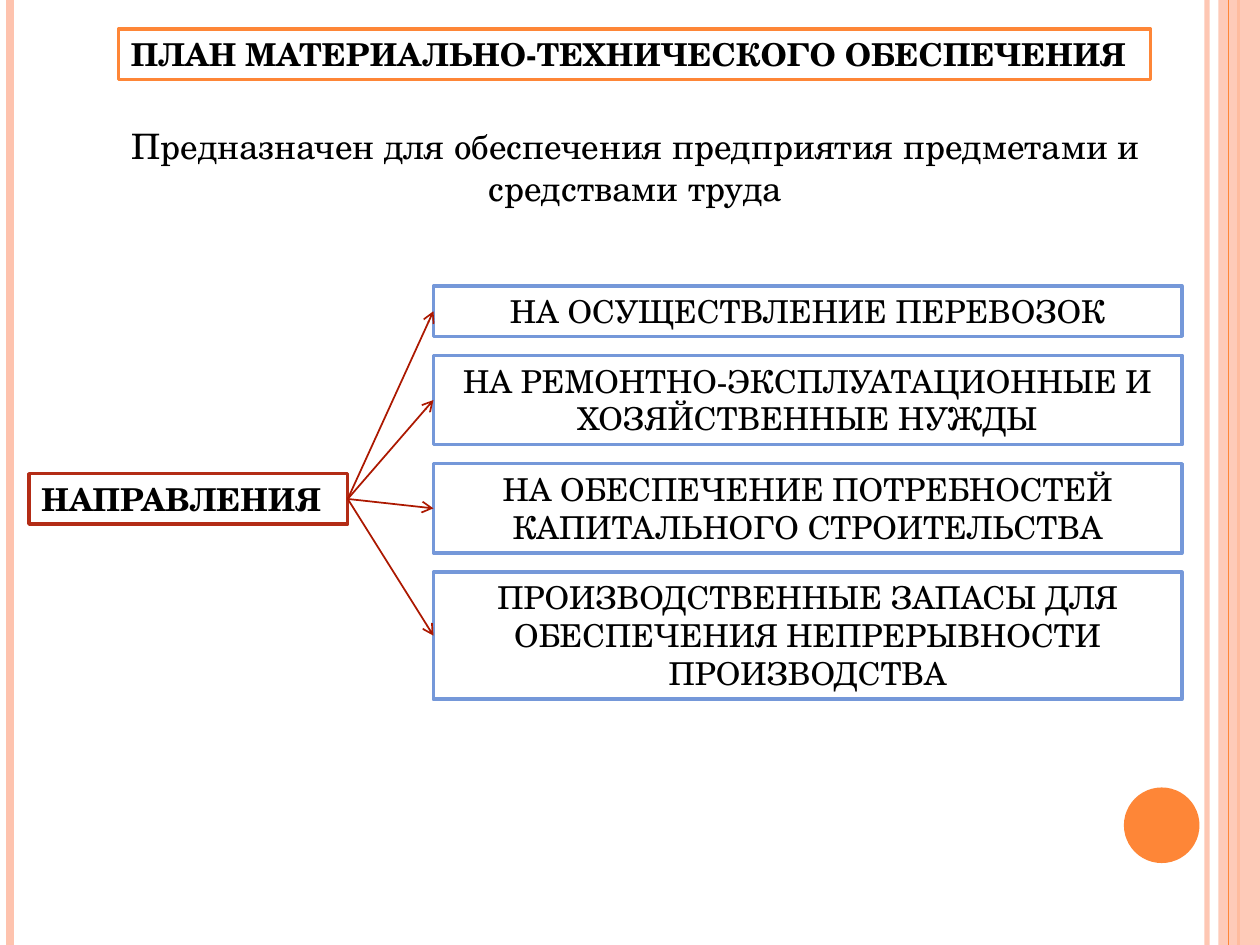
from lxml import etree
from pptx import Presentation
from pptx.dml.color import RGBColor
from pptx.enum.shapes import MSO_CONNECTOR, MSO_SHAPE
from pptx.enum.text import MSO_ANCHOR, PP_ALIGN
from pptx.oxml.ns import qn
from pptx.util import Inches, Pt

FONT = "TeX Gyre Schola"
ORANGE, PEACH, BLUE, RED, ARROW = "FE8637", "FEC3AE", "7598D9", "B32C16", "AC1800"
WIDTH, HEIGHT = 10, 7.5
GOALS = [
    ("НА ОСУЩЕСТВЛЕНИЕ ПЕРЕВОЗОК", 0.4),
    ("НА РЕМОНТНО-ЭКСПЛУАТАЦИОННЫЕ И ХОЗЯЙСТВЕННЫЕ НУЖДЫ", 0.71),
    ("НА ОБЕСПЕЧЕНИЕ ПОТРЕБНОСТЕЙ КАПИТАЛЬНОГО СТРОИТЕЛЬСТВА", 0.71),
    ("ПРОИЗВОДСТВЕННЫЕ ЗАПАСЫ ДЛЯ ОБЕСПЕЧЕНИЯ НЕПРЕРЫВНОСТИ ПРОИЗВОДСТВА", 1.01),
]


def color(value):
    return RGBColor.from_string(value)


def set_alpha(fill, percent):
    """Make a solid fill, of a shape or a line, partly transparent."""
    tone = fill.find(".//" + qn("a:srgbClr"))
    etree.SubElement(tone, qn("a:alpha"), val=str(percent * 1000))


def add_line(slide, start, end, tone, weight, arrow=False):
    points = [Inches(v) for v in (*start, *end)]
    line = slide.shapes.add_connector(MSO_CONNECTOR.STRAIGHT, *points)
    line.line.color.rgb = color(tone)
    line.line.width = Pt(weight)
    props = line._element.spPr
    if arrow:
        etree.SubElement(props.find(qn("a:ln")), qn("a:tailEnd"), type="arrow")
    etree.SubElement(props, qn("a:effectLst"))
    return line


def add_plain(slide, kind, box, fill, edge=None):
    shape = slide.shapes.add_shape(kind, *[Inches(v) for v in box])
    shape.shadow.inherit = False
    shape.fill.solid()
    shape.fill.fore_color.rgb = color(fill)
    if edge:
        shape.line.color.rgb = color(edge)
        shape.line.width = Pt(2)
    else:
        shape.line.fill.background()
    return shape


def write(shape, lines, size, align, bold=False):
    frame = shape.text_frame
    frame.word_wrap = True
    frame.vertical_anchor = MSO_ANCHOR.TOP
    for i, text in enumerate(lines):
        para = frame.add_paragraph() if i else frame.paragraphs[0]
        para.alignment = align
        run = para.add_run()
        run.text = text
        run.font.name = FONT
        run.font.size = Pt(size)
        run.font.bold = bold
        run.font.color.rgb = color("000000")


def add_label(slide, box, text, edge, align=PP_ALIGN.LEFT, bold=True):
    """Add a white framed box with text."""
    shape = add_plain(slide, MSO_SHAPE.RECTANGLE, box, "FFFFFF", edge)
    write(shape, [text], 18, align, bold)


def add_decor(slide, box):
    """Draw the side stripes and the disc."""
    left, top, width, height = box
    right, base = left + width, top + height

    def stripe(x, tone, weight):
        return add_line(slide, (x, top), (x, base), tone, weight)

    pale = stripe(right - 0.42, PEACH, 3)
    set_alpha(pale._element.spPr.find(qn("a:ln")), 93)
    stripe(left + 0.08, PEACH, 4.5)
    stripe(right - 0.17, ORANGE, 1.5)
    band = add_plain(slide, MSO_SHAPE.RECTANGLE, (right - 0.33, top, 0.33, height), PEACH)
    set_alpha(band._element.spPr.find(qn("a:solidFill")), 87)
    stripe(right - 0.25, ORANGE, 0.75)
    add_plain(slide, MSO_SHAPE.OVAL, (right - 1.08, base - 1.25, 0.6, 0.6), ORANGE)


def add_header(slide, box):
    left, top, width, height = box
    add_label(slide, (left + 0.08, top, 8.19, 0.4),
              "ПЛАН МАТЕРИАЛЬНО-ТЕХНИЧЕСКОГО ОБЕСПЕЧЕНИЯ", ORANGE)
    place = (left, top + 0.71, width, height - 0.71)
    note = slide.shapes.add_textbox(*[Inches(v) for v in place])
    write(note, ["Предназначен для обеспечения предприятия предметами и",
                 "средствами труда"], 20, PP_ALIGN.CENTER)


def add_goals(slide, box):
    """Stack the goals at the right and point to each from the root."""
    left, top, width, height = box
    root_w, root_h, goal_w = 2.53, 0.4, 5.94
    root_y = top + 1.49
    goal_x = left + width - goal_w
    gap = (height - sum(h for _, h in GOALS)) / (len(GOALS) - 1)
    start = (left + root_w, root_y + root_h / 2)
    add_label(slide, (left, root_y, root_w, root_h), "НАПРАВЛЕНИЯ", RED)
    y = top
    for text, h in GOALS:
        add_label(slide, (goal_x, y, goal_w, h), text, BLUE, PP_ALIGN.CENTER, False)
        add_line(slide, start, (goal_x, y + h / 2), ARROW, 1, arrow=True)
        y += h + gap


def main():
    deck = Presentation()
    deck.slide_width, deck.slide_height = Inches(WIDTH), Inches(HEIGHT)
    slide = deck.slides.add_slide(deck.slide_layouts[6])
    add_decor(slide, (0, 0, WIDTH, HEIGHT))
    add_header(slide, (0.86, 0.23, 8.37, 1.48))
    add_goals(slide, (0.23, 2.27, 9.15, 3.28))
    deck.save("out.pptx")


if __name__ == "__main__":
    main()
